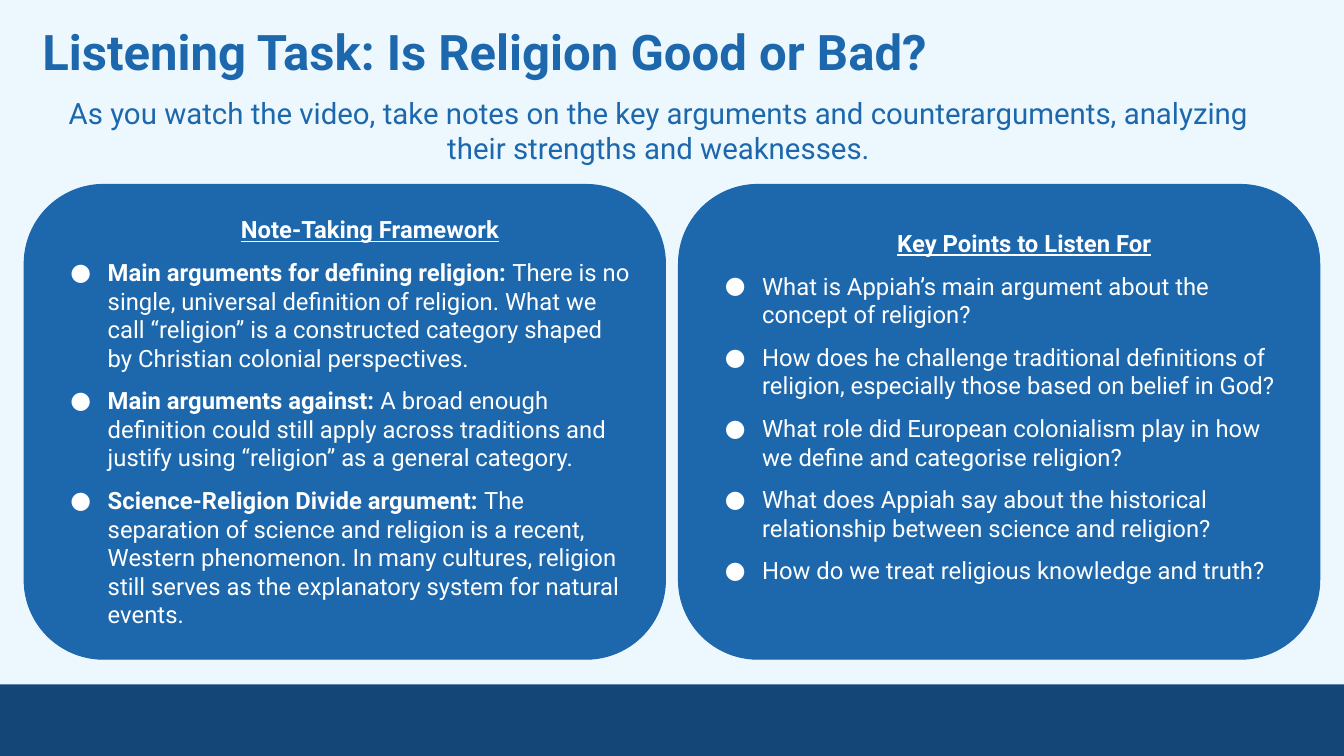
import pptx
import pptx.util
import pptx.dml.color
import pptx.enum.shapes
import pptx.enum.text
import pptx.oxml.ns
import lxml.etree
from dataclasses import dataclass

Inches = pptx.util.Inches
Pt = pptx.util.Pt
Align = pptx.enum.text.PP_ALIGN
Shape = pptx.enum.shapes.MSO_SHAPE


@dataclass
class Theme:
    font: str = "Roboto"
    back: str = "ECF8FE"
    blue: str = "1D67AC"
    navy: str = "144777"
    white: str = "FFFFFF"
    title: int = 35
    lead: int = 21
    body: int = 17
    gap: int = 10


class Deck:
    def __init__(self, theme):
        self.theme = theme
        self.show = pptx.Presentation()
        self.show.slide_width = Inches(13.33)
        self.show.slide_height = Inches(7.5)
        self.slide = self.show.slides.add_slide(self.show.slide_layouts[6])
        self.paint(self.slide.background.fill, theme.back)

    def color(self, code):
        return pptx.dml.color.RGBColor.from_string(code)

    def paint(self, fill, code):
        fill.solid()
        fill.fore_color.rgb = self.color(code)

    def style(self, run, size, code, bold=False, under=False):
        font = run.font
        font.name = self.theme.font
        font.size = Pt(size)
        font.color.rgb = self.color(code)
        font.bold = bold
        font.underline = under

    def inset(self, frame, side, foot):
        frame.word_wrap = True
        frame.margin_left = frame.margin_right = frame.margin_top = Inches(side)
        frame.margin_bottom = Inches(foot)

    def shape(self, kind, box, code):
        item = self.slide.shapes.add_shape(kind, *map(Inches, box))
        item.shadow.inherit = False
        self.paint(item.fill, code)
        item.line.fill.background()
        return item

    def text(self, box, words, size, side, align=Align.LEFT, bold=False):
        frame = self.slide.shapes.add_textbox(*map(Inches, box)).text_frame
        self.inset(frame, side, side)
        frame.text = words
        line = frame.paragraphs[0]
        line.alignment = align
        self.style(line.runs[0], size, self.theme.blue, bold)

    def indent(self, line, hang):
        props = line._p.get_or_add_pPr()
        props.set("marL", str(Inches(0.5)))
        props.set("indent", str(Inches(hang)))
        return props

    def bullet(self, frame, lead, words):
        line = frame.add_paragraph()
        line.alignment = Align.LEFT
        line.space_before = Pt(self.theme.gap)
        props = self.indent(line, -0.37)
        name = pptx.oxml.ns.qn
        tint = lxml.etree.SubElement(props, name("a:buClr"))
        lxml.etree.SubElement(tint, name("a:srgbClr"), val=self.theme.white)
        lxml.etree.SubElement(props, name("a:buFont"), typeface=self.theme.font)
        lxml.etree.SubElement(props, name("a:buChar"), char="●")
        for part, bold in ((lead, True), (words, False)):
            if part:
                run = line.add_run()
                run.text = part
                self.style(run, self.theme.body, self.theme.white, bold)

    def card(self, left, head, points, foot):
        item = self.shape(Shape.ROUNDED_RECTANGLE, (left, 1.83, 6.36, 4.71), self.theme.blue)
        item.adjustments[0] = 0.167
        self.paint(item.line.fill, self.theme.blue)
        item.line.width = Pt(0.75)
        frame = item.text_frame
        self.inset(frame, 0.1, foot)
        frame.vertical_anchor = pptx.enum.text.MSO_ANCHOR.MIDDLE
        frame.text = head
        line = frame.paragraphs[0]
        line.alignment = Align.CENTER
        self.indent(line, 0)
        self.style(line.runs[0], self.theme.body, self.theme.white, True, True)
        for lead, words in points:
            self.bullet(frame, lead, words)


NOTES = [
    ("Main arguments for defining religion: ",
     "There is no single, universal definition of religion. What we call “religion” is a "
     "constructed category shaped by Christian colonial perspectives."),
    ("Main arguments against: ",
     "A broad enough definition could still apply across traditions and justify using "
     "“religion” as a general category."),
    ("Science-Religion Divide argument: ",
     "The separation of science and religion is a recent, Western phenomenon. In many "
     "cultures, religion still serves as the explanatory system for natural events."),
]
POINTS = [
    ("", "What is Appiah’s main argument about the concept of religion?"),
    ("", "How does he challenge traditional definitions of religion, especially those "
         "based on belief in God?"),
    ("", "What role did European colonialism play in how we define and categorise religion?"),
    ("", "What does Appiah say about the historical relationship between science and religion?"),
    ("", "How do we treat religious knowledge and truth?"),
]


def main():
    theme = Theme()
    deck = Deck(theme)
    deck.shape(Shape.RECTANGLE, (0, 6.79, 13.33, 0.71), theme.navy)
    deck.text((0.29, 0.08, 12.19, 0.86), "Listening Task: Is Religion Good or Bad?",
              theme.title, 0.13, bold=True)
    deck.text((0.29, 0.84, 12.48, 0.91),
              "As you watch the video, take notes on the key arguments and "
              "counterarguments, analyzing their strengths and weaknesses.",
              theme.lead, 0.1, Align.CENTER)
    deck.card(6.73, "Key Points to Listen For", POINTS, 0.4)
    deck.card(0.24, "Note-Taking Framework", NOTES, 0.1)
    deck.show.save("out.pptx")


if __name__ == "__main__":
    main()
